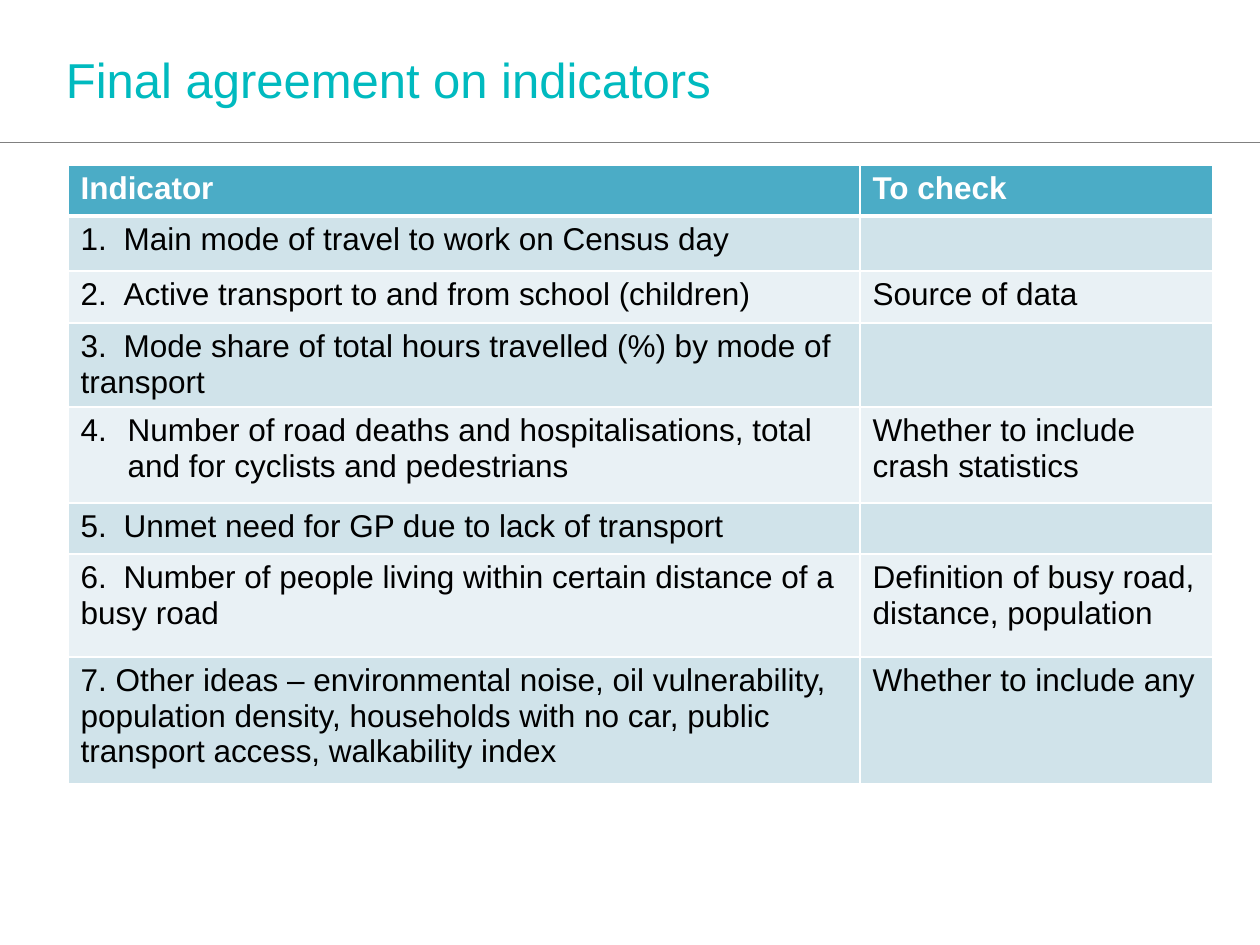
from lxml import etree
from pptx import Presentation
from pptx import util as u
from pptx.dml.color import RGBColor
from pptx.enum import shapes, text
from pptx.oxml.ns import qn

PX = 914400 / 126
COLORS = {"title": "00BABF", "rule": "808080", "header": "4BACC6", "odd": "D0E3EA",
          "even": "E9F1F5", "white": "FFFFFF", "black": "000000"}


def px(n):
    return u.Emu(round(n * PX))


def add_border(cell, side, points):
    border = etree.SubElement(cell._tc.get_or_add_tcPr(), qn(f"a:ln{side}"), w=str(u.Pt(points)))
    fill = etree.SubElement(border, qn("a:solidFill"))
    etree.SubElement(fill, qn("a:srgbClr"), val=COLORS["white"])


deck = Presentation()
deck.slide_width, deck.slide_height = px(1260), px(945)
slide = deck.slides.add_slide(deck.slide_layouts[5])

rule = slide.shapes.add_connector(shapes.MSO_CONNECTOR.STRAIGHT, 0, px(142), px(1260), px(142))
rule.line.color.rgb = RGBColor.from_string(COLORS["rule"])
rule.line.width = u.Pt(0.25)
etree.SubElement(rule._element.spPr, qn("a:effectLst"))

title = slide.shapes.title
title.left, title.top, title.width, title.height = px(58), px(36), px(1085), px(100)
title_frame = title.text_frame
title_frame.vertical_anchor = text.MSO_ANCHOR.TOP
title_frame.margin_left, title_frame.margin_top = px(8), px(13)
heading = title_frame.paragraphs[0]
heading.alignment = text.PP_ALIGN.LEFT
heading_run = heading.add_run()
heading_run.text = "Final agreement on indicators"
heading_run.font.name, heading_run.font.size = "Arial", u.Pt(28)
heading_run.font.color.rgb = RGBColor.from_string(COLORS["title"])

rows = [
    (51, "Indicator", "To check"),
    (55, "1.\tMain mode of travel to work on Census day", ""),
    (52, "2.\tActive transport to and from school (children)", "Source of data"),
    (84, "3.\tMode share of total hours travelled (%) by mode of transport", ""),
    (96, "Number of road deaths and hospitalisations, total and for cyclists and pedestrians",
     "Whether to include crash statistics"),
    (51, "5.\tUnmet need for GP due to lack of transport", ""),
    (103, "6.\tNumber of people living within certain distance of a busy road",
     "Definition of busy road, distance, population"),
    (127, "7. Other ideas – environmental noise, oil vulnerability, population density, "
     "households with no car, public transport access, walkability index",
     "Whether to include any"),
]
HANGING_ROW = 4
table_height = sum(row[0] for row in rows)
indicators = slide.shapes.add_table(len(rows), 2, px(68), px(165), px(1145), px(table_height)).table
indicators.columns[0].width, indicators.columns[1].width = px(792), px(353)

for r, (height, *entries) in enumerate(rows):
    indicators.rows[r].height = px(height)
    band = "header" if r == 0 else "odd" if r % 2 else "even"
    for c, entry in enumerate(entries):
        cell = indicators.cell(r, c)
        for side in "LRTB":
            add_border(cell, side, 3 if (r, side) in [(0, "B"), (1, "T")] else 1)
        cell.fill.solid()
        cell.fill.fore_color.rgb = RGBColor.from_string(COLORS[band])
        line = cell.text_frame.paragraphs[0]
        props = line._p.get_or_add_pPr()
        if c == 0 and r == HANGING_ROW:
            props.set("marL", str(px(47)))
            props.set("indent", str(-px(47)))
            etree.SubElement(props, qn("a:buFont"), typeface="+mj-lt")
            etree.SubElement(props, qn("a:buAutoNum"), type="arabicPeriod", startAt=str(r))
        elif "\t" in entry:
            tabs = etree.SubElement(props, qn("a:tabLst"))
            etree.SubElement(tabs, qn("a:tab"), pos=str(px(43)), algn="l")
        line.font.size = u.Pt(18)
        if entry:
            run = line.add_run()
            run.text = entry
            run.font.name, run.font.size, run.font.bold = "Arial", u.Pt(18), r == 0
            run.font.color.rgb = RGBColor.from_string(COLORS["black" if r else "white"])

deck.save("out.pptx")
